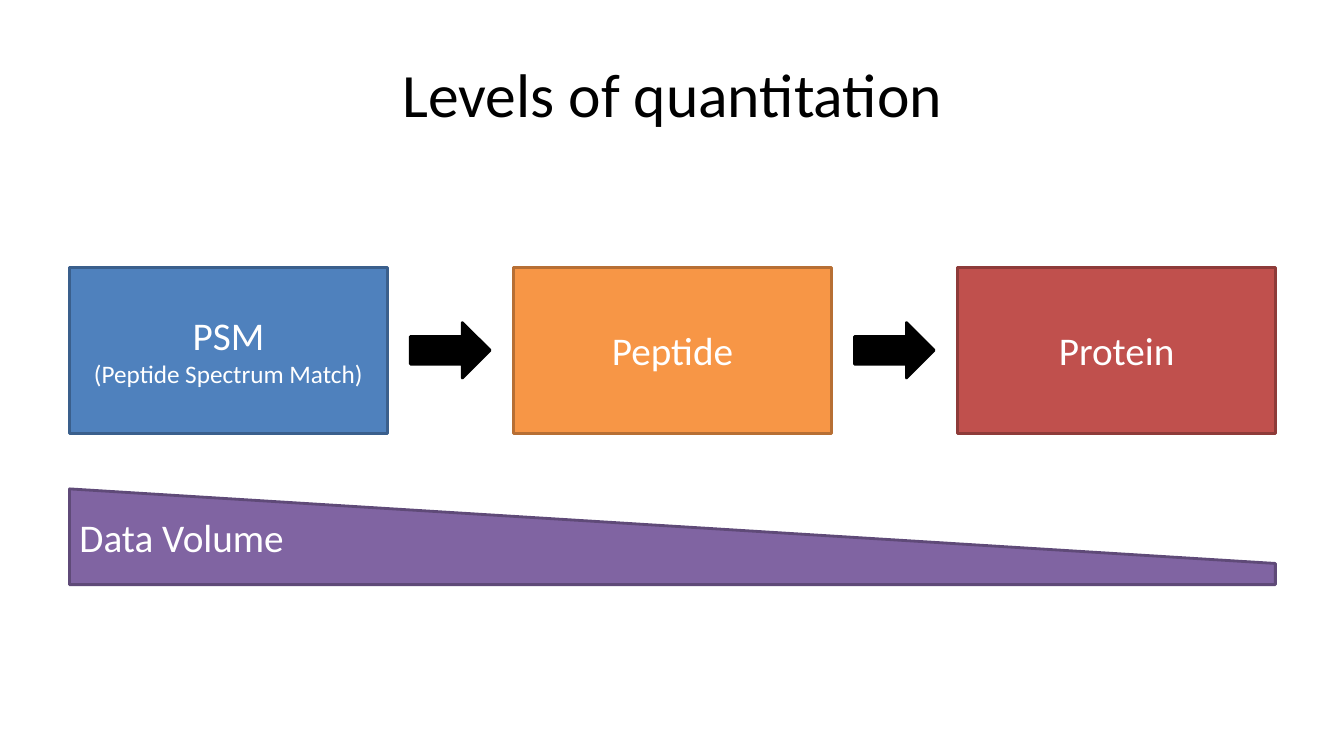
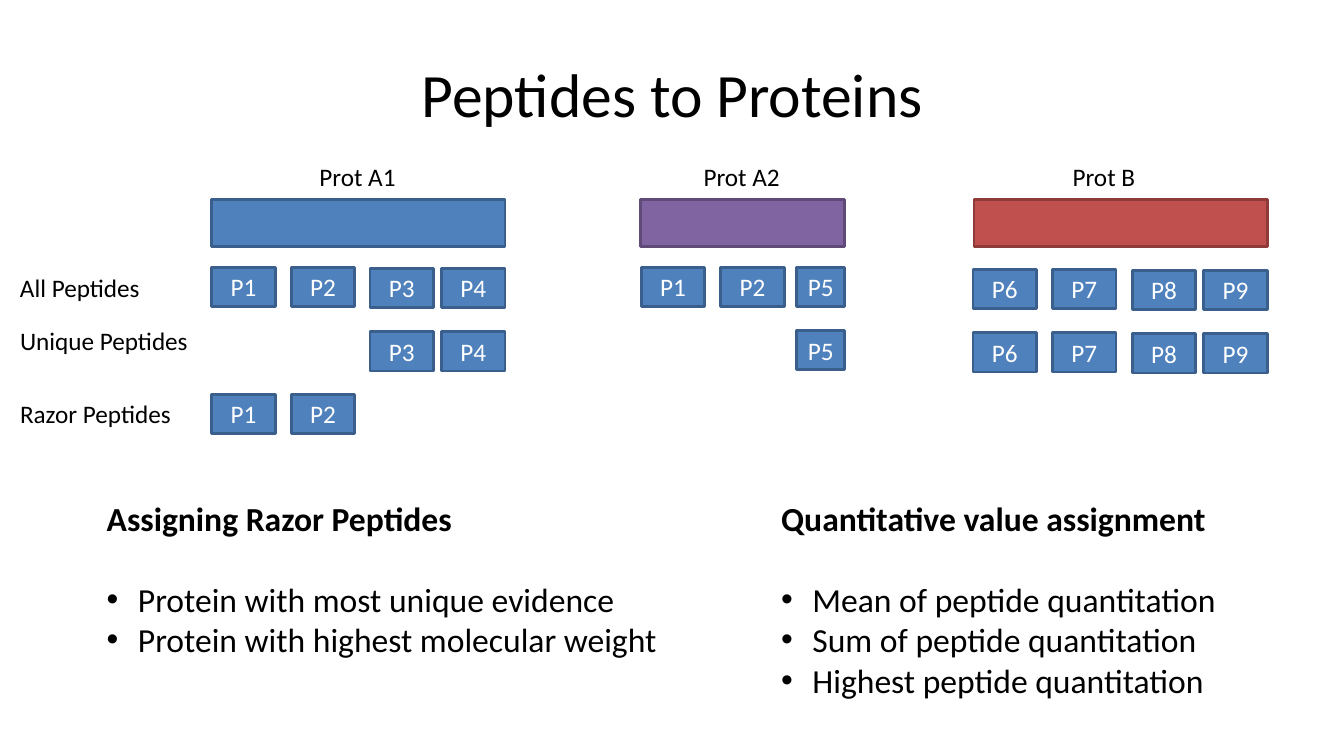
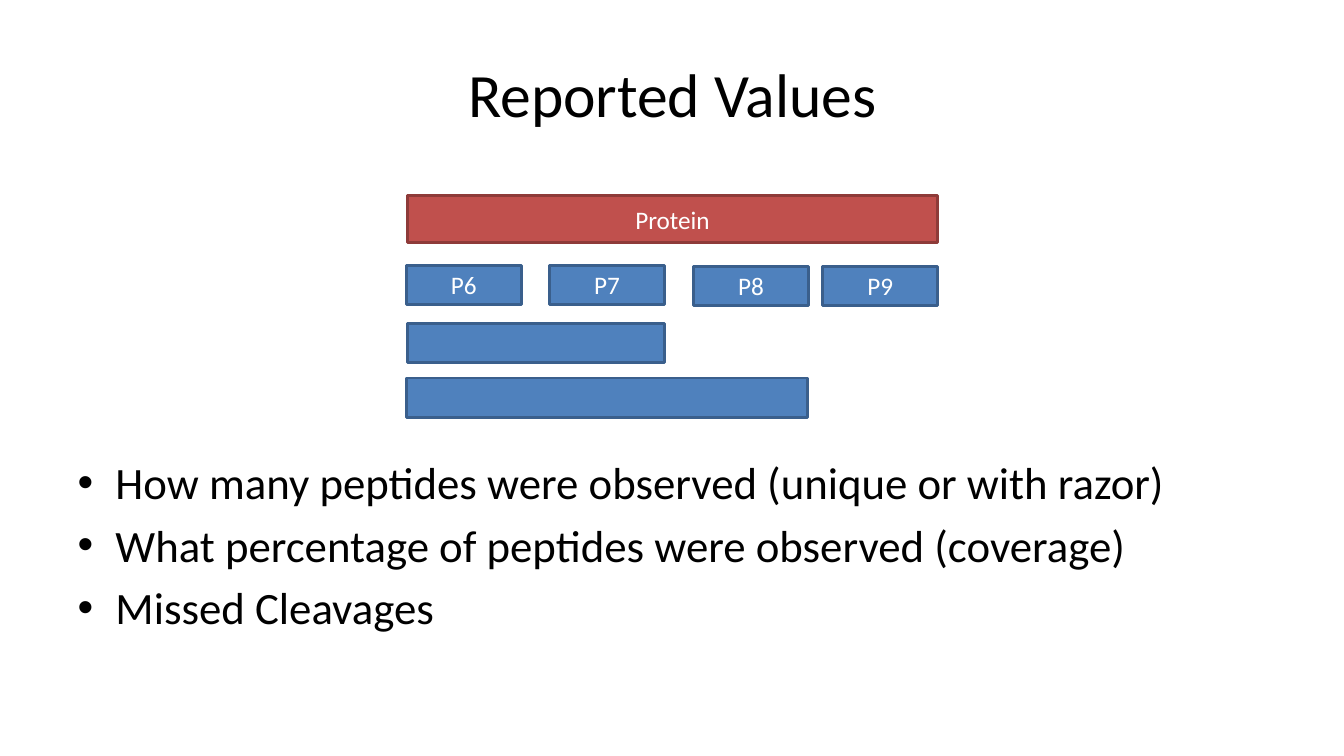
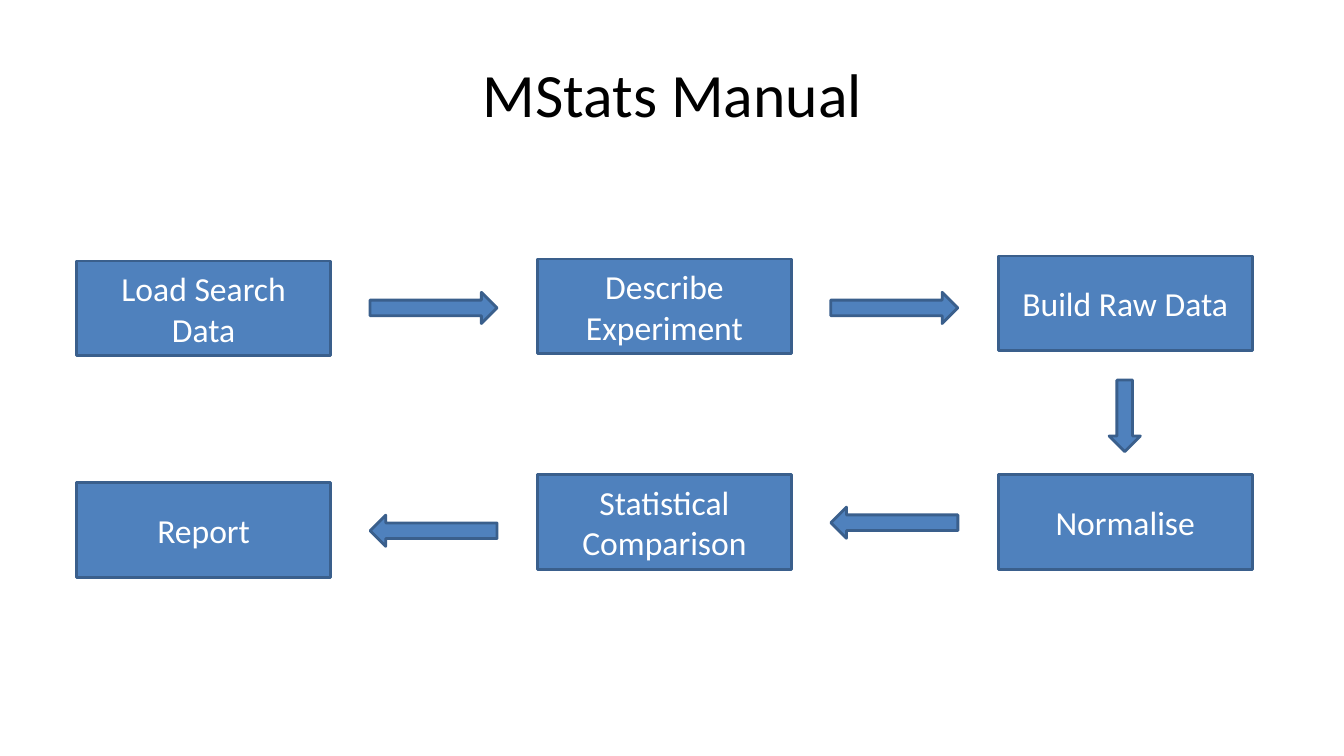
from collections import Counter

from lxml import etree
from pptx import Presentation
from pptx.dml.color import RGBColor
from pptx.enum.shapes import MSO_SHAPE as Shape
from pptx.enum.text import MSO_ANCHOR as Anchor, PP_ALIGN as Align
from pptx.oxml.ns import qn
from pptx.util import Inches, Pt

# Shared style
FONT = "Calibri"
BLACK = RGBColor(0x00, 0x00, 0x00)
WHITE = RGBColor(0xFF, 0xFF, 0xFF)
BLUE = RGBColor(0x4F, 0x81, 0xBD)
ORANGE = RGBColor(0xF7, 0x96, 0x46)
RED = RGBColor(0xC0, 0x50, 0x4D)
PURPLE = RGBColor(0x80, 0x64, 0xA2)
OUTLINES = {
    BLACK: BLACK,
    BLUE: RGBColor(0x3A, 0x5F, 0x8C),
    ORANGE: RGBColor(0xB7, 0x6F, 0x34),
    RED: RGBColor(0x8E, 0x3B, 0x39),
    PURPLE: RGBColor(0x5F, 0x4A, 0x78),
}
TITLE_ONLY, TITLE_AND_BODY = 5, 1
PEPTIDE_HEIGHT = 0.39
BAR_HEIGHT = 0.47

# Proteins: name, label left, bar left, bar width, colour,
# and peptides as (name, left, drop below the row, width)
PROTEINS = [
    ("Prot A1", 3.07, 2.1, 2.91, BLUE,
     [("P1", 2.1, 0, 0.63), ("P2", 2.89, 0, 0.63),
      ("P3", 3.67, 0.01, 0.63), ("P4", 4.38, 0.01, 0.63)]),
    ("Prot A2", 6.88, 6.35, 2.03, PURPLE,
     [("P1", 6.36, 0, 0.63), ("P2", 7.15, 0, 0.63), ("P5", 7.9, 0, 0.48)]),
    ("Prot B", 10.54, 9.66, 2.91, RED,
     [("P6", 9.65, 0.02, 0.63), ("P7", 10.44, 0.02, 0.63),
      ("P8", 11.23, 0.03, 0.63), ("P9", 11.94, 0.03, 0.63)]),
]


# Element helpers
def add_text(frame, text, size=18, color=BLACK, bold=False, align=Align.LEFT,
             space_before=None, bullet_indent=None):
    """Add one paragraph, using the frame's first one while it is empty."""
    paragraph = frame.paragraphs[0]
    if paragraph.runs:
        paragraph = frame.add_paragraph()
    paragraph.alignment = align
    if space_before is not None:
        paragraph.space_before = Pt(space_before)
    if bullet_indent:
        properties = paragraph._p.get_or_add_pPr()
        properties.set("marL", str(Inches(bullet_indent)))
        properties.set("indent", str(-Inches(bullet_indent)))
        etree.SubElement(properties, qn("a:buFont")).set("typeface", "Arial")
        etree.SubElement(properties, qn("a:buChar")).set("char", "•")
    run = paragraph.add_run()
    run.text = text
    run.font.name = FONT
    run.font.size = Pt(size)
    run.font.bold = bold
    run.font.color.rgb = color


def place(shape, left, top, width, height):
    shape.left, shape.top = Inches(left), Inches(top)
    shape.width, shape.height = Inches(width), Inches(height)


def add_titled_slide(presentation, title, layout=TITLE_ONLY):
    slide = presentation.slides.add_slide(presentation.slide_layouts[layout])
    shape = slide.shapes.title
    place(shape, 0.67, 0.3, 12, 1.25)
    shape.text_frame.vertical_anchor = Anchor.MIDDLE
    add_text(shape.text_frame, title, size=44, align=Align.CENTER)
    return slide


def paint(shape, color):
    shape.shadow.inherit = False
    shape.fill.solid()
    shape.fill.fore_color.rgb = color
    shape.line.color.rgb = OUTLINES[color]
    shape.line.width = Pt(2)


def add_block(slide, left, top, width, height, color=BLUE, text="", size=18,
              kind=Shape.RECTANGLE, rotation=0):
    shape = slide.shapes.add_shape(
        kind, Inches(left), Inches(top), Inches(width), Inches(height))
    paint(shape, color)
    shape.rotation = rotation
    shape.text_frame.vertical_anchor = Anchor.MIDDLE
    if text:
        add_text(shape.text_frame, text, size=size, color=WHITE,
                 align=Align.CENTER)
    return shape


def add_arrow(slide, left, top, width, height, color=BLUE, rotation=0):
    add_block(slide, left, top, width, height, color,
              kind=Shape.RIGHT_ARROW, rotation=rotation)


def add_text_box(slide, left, top, width, height):
    box = slide.shapes.add_textbox(
        Inches(left), Inches(top), Inches(width), Inches(height))
    box.text_frame.word_wrap = False
    return box.text_frame


def add_label(slide, text, left, top, width):
    add_text(add_text_box(slide, left, top, width, 0.4), text)


def add_peptide(slide, name, left, top, width):
    add_block(slide, left, top, width, PEPTIDE_HEIGHT, text=name)


def add_headed_list(slide, left, width, height, heading, items):
    frame = add_text_box(slide, left, 4.89, width, height)
    add_text(frame, heading, size=24, bold=True)
    for index, item in enumerate(items):
        add_text(frame, item, size=24, bullet_indent=0.31,
                 space_before=0 if index else 29)


# Slides
def build_levels(presentation):
    slide = add_titled_slide(presentation, "Levels of quantitation")
    pitch = 4.405
    levels = [("PSM", BLUE), ("Peptide", ORANGE), ("Protein", RED)]
    blocks = [add_block(slide, 0.69 + pitch * column, 2.65, 3.15, 1.65, color,
                        name, size=28)
              for column, (name, color) in enumerate(levels)]
    add_text(blocks[0].text_frame, "(Peptide Spectrum Match)", color=WHITE,
             align=Align.CENTER)
    for column in range(2):
        add_arrow(slide, 4.07 + pitch * column, 3.2, 0.79, 0.55, BLACK)

    # Wedge of shrinking data volume
    corners = [(Inches(x), Inches(y)) for x, y in
               [(0.69, 4.85), (12.65, 5.59), (12.65, 5.8), (0.69, 5.8)]]
    builder = slide.shapes.build_freeform(*corners[0])
    builder.add_line_segments(corners[1:], close=True)
    wedge = builder.convert_to_shape()
    paint(wedge, PURPLE)
    wedge.text_frame.vertical_anchor = Anchor.MIDDLE
    add_text(wedge.text_frame, "Data Volume", size=28, color=WHITE)


def build_peptides_to_proteins(presentation):
    slide = add_titled_slide(presentation, "Peptides to Proteins")
    for label, top, width in [("All Peptides", 2.65, 1.4),
                              ("Unique Peptides", 3.18, 1.89),
                              ("Razor Peptides", 3.9, 1.72)]:
        add_label(slide, label, 0.1, top, width)

    # Unique peptides occur in one protein; shared ones go to the first
    counts = Counter(peptide[0] for protein in PROTEINS
                     for peptide in protein[-1])
    assigned = set()
    for name, label_left, bar_left, bar_width, color, peptides in PROTEINS:
        add_label(slide, name, label_left, 1.55, 0.96)
        add_block(slide, bar_left, 1.98, bar_width, BAR_HEIGHT, color)
        for peptide, left, drop, width in peptides:
            add_peptide(slide, peptide, left, 2.65 + drop, width)
            if counts[peptide] == 1:
                add_peptide(slide, peptide, left, 3.28 + drop, width)
            elif peptide not in assigned:
                add_peptide(slide, peptide, left, 3.91 + drop, width)
                assigned.add(peptide)

    add_headed_list(slide, 0.96, 5.71, 1.72, "Assigning Razor Peptides",
                    ["Protein with most unique evidence",
                     "Protein with highest molecular weight"])
    add_headed_list(slide, 7.65, 4.56, 2.12, "Quantitative value assignment",
                    ["Mean of peptide quantitation",
                     "Sum of peptide quantitation",
                     "Highest peptide quantitation"])


def build_reported_values(presentation):
    slide = add_titled_slide(presentation, "Reported Values", TITLE_AND_BODY)
    body = slide.placeholders[1]
    place(body, 0.67, 4.46, 12, 2.24)
    for item in ["How many peptides were observed (unique or with razor)",
                 "What percentage of peptides were observed (coverage)",
                 "Missed Cleavages"]:
        add_text(body.text_frame, item, size=32)

    add_block(slide, 4.04, 1.94, 5.26, BAR_HEIGHT, RED, "Protein")
    for name, left, top in [("P6", 4.03, 2.63), ("P7", 5.45, 2.63),
                            ("P8", 6.88, 2.64), ("P9", 8.16, 2.64)]:
        add_peptide(slide, name, left, top, 1.14)
    # Missed cleavages span several peptides
    add_peptide(slide, "", 4.04, 3.21, 2.55)
    add_peptide(slide, "", 4.03, 3.75, 3.98)


def build_manual(presentation):
    slide = add_titled_slide(presentation, "MStats Manual")
    pitch = 4.57
    steps = [("Load Search Data", 0, 2.59), ("Describe Experiment", 1, 2.57),
             ("Build Raw Data", 2, 2.54), ("Normalise", 2, 4.71),
             ("Statistical Comparison", 1, 4.71), ("Report", 0, 4.79)]
    for name, column, top in steps:
        add_block(slide, 0.76 + pitch * column, top, 2.52, 0.94, text=name,
                  size=24)
    for column, top, rotation in [(0, 2.9, 0), (1, 2.9, 0),
                                  (1, 5.03, 180), (0, 5.11, 180)]:
        add_arrow(slide, 3.67 + pitch * column, top, 1.26, 0.31,
                  rotation=rotation)
    add_arrow(slide, 10.8, 3.97, 0.71, 0.31, rotation=90)


def main():
    presentation = Presentation()
    presentation.slide_width = Inches(13.33)
    presentation.slide_height = Inches(7.5)
    build_levels(presentation)
    build_peptides_to_proteins(presentation)
    build_reported_values(presentation)
    build_manual(presentation)
    presentation.save("out.pptx")


if __name__ == "__main__":
    main()
